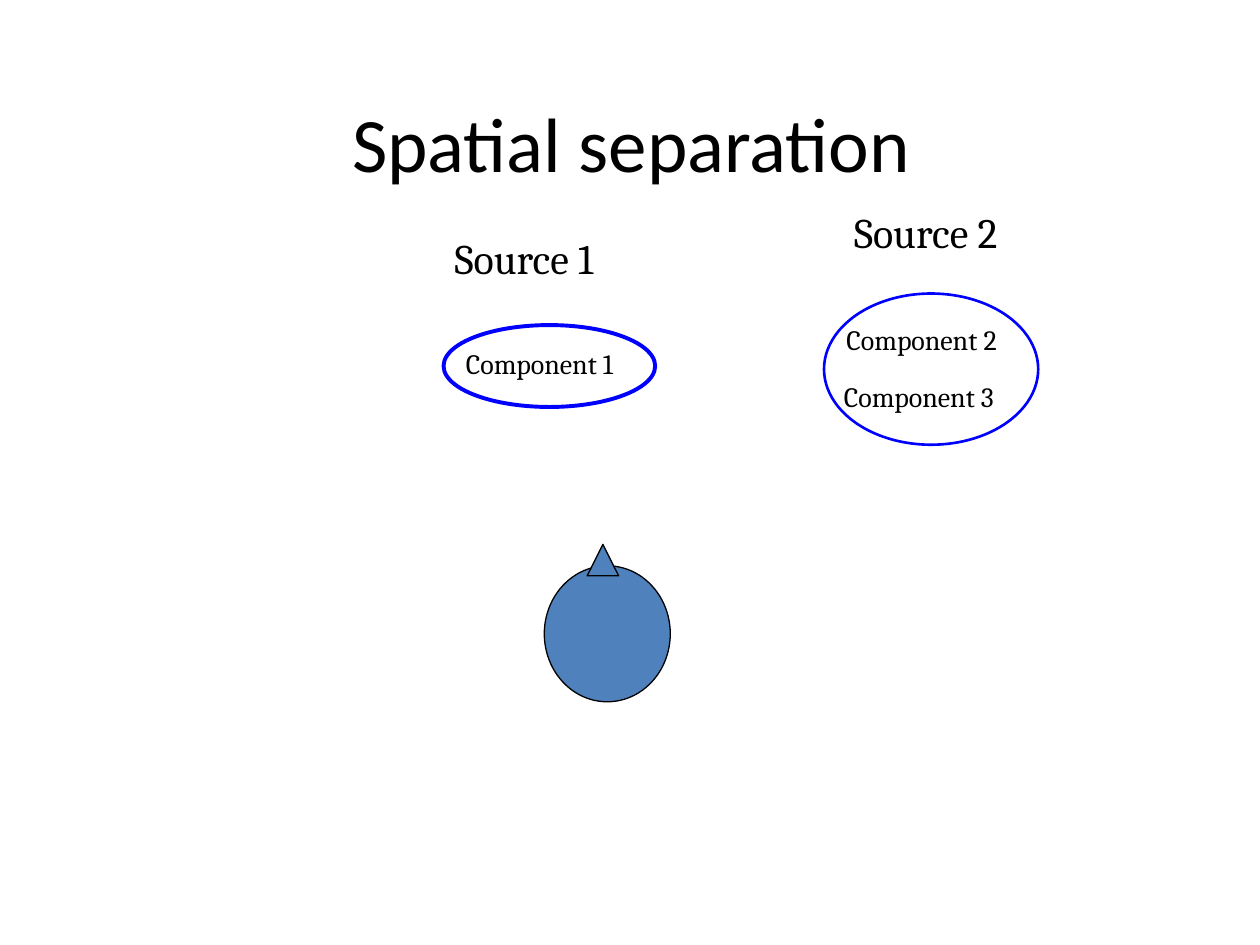
from pptx import Presentation
from pptx.dml.color import RGBColor
from pptx.enum.shapes import MSO_SHAPE
from pptx.enum.text import MSO_ANCHOR, MSO_AUTO_SIZE, PP_ALIGN
from pptx.util import Inches, Pt

OVAL, TRIANGLE = MSO_SHAPE.OVAL, MSO_SHAPE.ISOSCELES_TRIANGLE
MIDDLE, TOP = MSO_ANCHOR.MIDDLE, MSO_ANCHOR.TOP
CENTER, LEFT = PP_ALIGN.CENTER, PP_ALIGN.LEFT
FIT, FIXED = MSO_AUTO_SIZE.SHAPE_TO_FIT_TEXT, MSO_AUTO_SIZE.NONE
BLACK, BLUE, STEEL = "000000", "0000FF", "4F81BD"

prs = Presentation()
prs.slide_width, prs.slide_height = Inches(10), Inches(7.5)
COL, ROW = prs.slide_width / 100, prs.slide_height / 75
s = prs.slides.add_slide(prs.slide_layouts[0])


def box(left, top, width, height):
    return [round(v) for v in (left * COL, top * ROW, width * COL, height * ROW)]


def write(sp, text, size, name, align, frame):
    tf = sp.text_frame
    for key, value in frame.items():
        setattr(tf, key, value)
    p = tf.paragraphs[0]
    p.alignment = align
    r = p.add_run()
    r.text = text
    for key, value in {"size": Pt(size), "name": name}.items():
        setattr(r.font, key, value)
    r.font.color.rgb = RGBColor.from_string(BLACK)


title, subtitle = s.placeholders
subtitle.element.getparent().remove(subtitle.element)
title.left, title.top, title.width, title.height = box(8.3, 5, 85, 12.5)
write(title, "Spatial separation ", 44, "Calibri", CENTER,
      {"vertical_anchor": MIDDLE, "word_wrap": True, "auto_size": FIXED})

head = s.shapes.add_group_shape()
for parent, kind, place, fill, line, weight in [
    (head, OVAL, (43.2, 44.9, 10, 10.8), STEEL, BLACK, 0.75),
    (head, TRIANGLE, (46.6, 43.2, 2.5, 2.5), STEEL, BLACK, 0.75),
    (s, OVAL, (65.4, 23.3, 17, 12), None, BLUE, 1.5),
    (s, OVAL, (35.2, 25.8, 16.8, 6.5), None, BLUE, 2.25),
]:
    sp = parent.shapes.add_shape(kind, *box(*place))
    sp.shadow.inherit = False
    if fill:
        sp.fill.solid()
        sp.fill.fore_color.rgb = RGBColor.from_string(fill)
    else:
        sp.fill.background()
    sp.line.color.rgb = RGBColor.from_string(line)
    sp.line.width = Pt(weight)

for text, left, top, size in [
    ("Component 1", 36, 27, 16),
    ("Component 2", 66.2, 25.1, 16),
    ("Component 3", 66, 29.6, 16),
    ("Source 1", 35.1, 18, 24),
    ("Source 2", 66.8, 15.9, 24),
]:
    height = 5 if size == 24 else 3.7
    sp = s.shapes.add_textbox(*box(left, top, 14, height))
    write(sp, text, size, "Cambria", LEFT,
          {"vertical_anchor": TOP, "word_wrap": size == 24, "auto_size": FIT})

prs.save("out.pptx")
